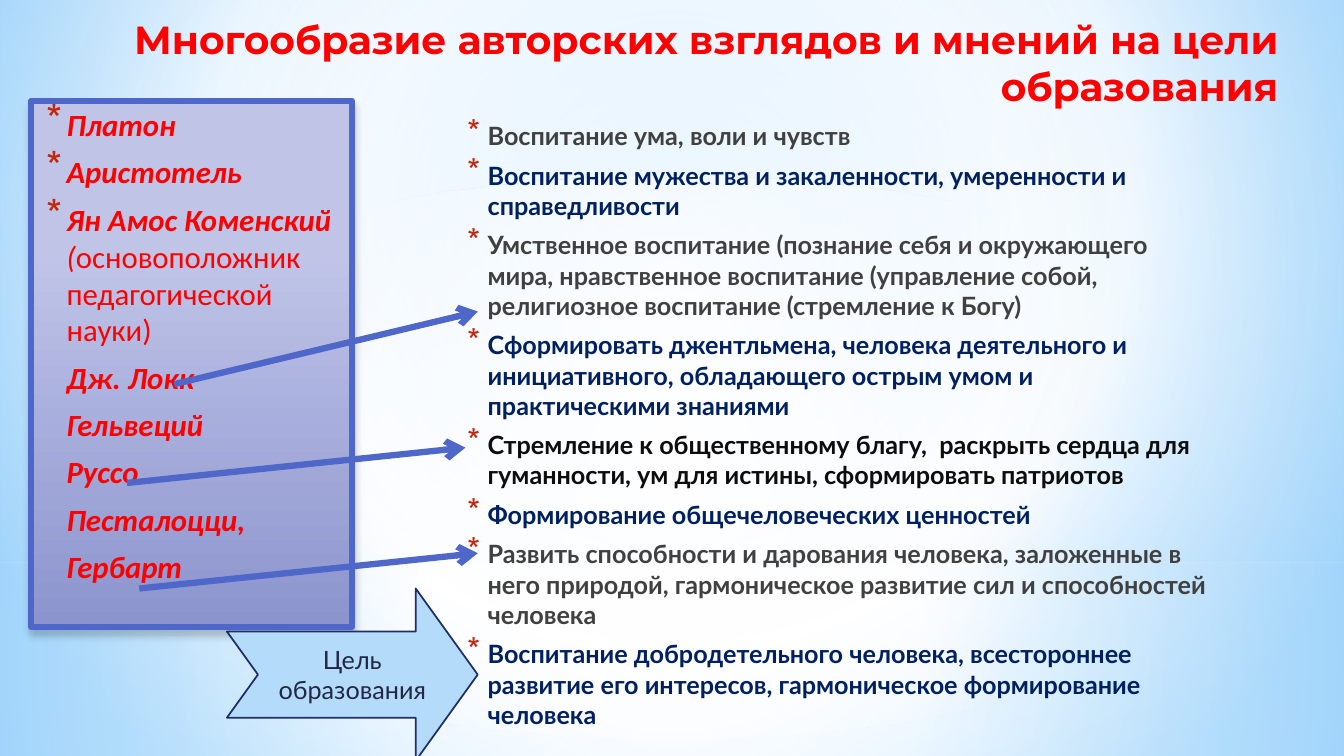
from lxml.etree import SubElement
from pptx import Presentation
from pptx.dml.color import RGBColor
from pptx.enum.shapes import MSO_CONNECTOR, MSO_SHAPE
from pptx.enum.text import MSO_ANCHOR, PP_ALIGN
from pptx.oxml.ns import qn
from pptx.util import Cm, Pt

RED, BLUE, NAVY, GREY = "FF0000", "4E67C8", "002060", "404040"
BLACK, SKY, WHITE, RUST, INK = "0D0D0D", "B4DCFA", "FFFFFF", "C3260C", "212745"

PAGE = (0, 0, 33.87, 19.05)
HEAD = (0.79, 0.25, 31.67, 2.29)
PANEL = (0.79, 2.54, 8.08, 13.26)
LIST = (11.4, 2.91, 19.33, 14.6)
ARROW = (5.72, 14.83, 6.32, 4.34)

CENTER, UPPER = (50, 50, 50, 50), (20, 10, 20, 60)
BASE = [(0, "9ED5FF", 100), (60, WHITE, 100), (100, "5BB9FF", 100)]
LILAC = [(28, "C0C5E8", 100), (100, "8C94CE", 100)]
FLOOR = [(0, WHITE, 91), (37, WHITE, 76), (100, SKY, 79)]
WALL = [(0, WHITE, 89), (48, WHITE, 62), (100, SKY, 79)]
BAND = [(0, WHITE, 0), (29, WHITE, 30), (45, SKY, 40), (55, WHITE, 26),
        (65, SKY, 60), (100, WHITE, 0)]
GLOW = [(0, WHITE, 100), (56, WHITE, 0)]
SPLIT = 0.744
LAYERS = [
    (MSO_SHAPE.RECTANGLE, SPLIT, 1 - SPLIT, FLOOR, CENTER),
    (MSO_SHAPE.RECTANGLE, 0, SPLIT, WALL, CENTER),
    (MSO_SHAPE.RECTANGLE, 0.55, 0.333, BAND, None),
    (MSO_SHAPE.OVAL, 0.233, SPLIT, GLOW, CENTER),
]

TITLE = "Многообразие авторских взглядов и мнений на цели образования"
LABEL = "Цель образования"
STARRED = ["Платон", "Аристотель", "Ян Амос Коменский "]
PLAIN = ["Дж. Локк", "Гельвеций", "Руссо", "Песталоцци,", "Гербарт"]
NOTE = [("(", True), ("основоположник педагогической науки)", False)]
GOALS = [
    ("Воспитание ума, воли и чувств", GREY),
    ("Воспитание мужества и закаленности, умеренности и справедливости", NAVY),
    ("Умственное воспитание (познание себя и окружающего мира, нравственное "
     "воспитание (управление собой, религиозное воспитание (стремление к Богу)", GREY),
    ("Сформировать джентльмена, человека деятельного и инициативного, "
     "обладающего острым умом и практическими знаниями", NAVY),
    ("Стремление к общественному благу,  раскрыть сердца для гуманности, "
     "ум для истины, сформировать патриотов", BLACK),
    ("Формирование общечеловеческих ценностей", NAVY),
    ("Развить способности и дарования человека, заложенные в него природой, "
     "гармоническое развитие сил и способностей человека", GREY),
    ("Воспитание добродетельного человека, всестороннее развитие его интересов, "
     "гармоническое формирование человека", NAVY),
]
LINKS = [((3.6, 7.14), (11.25, 5.31)), ((2.41, 9.63), (10.94, 8.74)),
         ((2.72, 12.29), (11.25, 11.4))]


def color(code):
    """Turn a hex string into a colour."""
    return RGBColor.from_string(code)


def node(parent, tag, **attrs):
    """Add a drawing element with its attributes."""
    return SubElement(parent, qn("a:" + tag), {k: str(v) for k, v in attrs.items()})


def tint(parent, code, alpha):
    """Add a colour of the given opacity in percent."""
    node(node(parent, "srgbClr", val=code), "alpha", val=alpha * 1000)


def blend(owner, fill, stops, focus=None):
    """Fill with a round gradient about the focus, or a downward one."""
    fill.gradient()
    grad = owner._element.find(".//" + qn("a:gradFill"))
    for child in list(grad):
        grad.remove(child)
    group = node(grad, "gsLst")
    for pos, code, alpha in stops:
        tint(node(group, "gs", pos=pos * 1000), code, alpha)
    if focus:
        sides = {side: part * 1000 for side, part in zip("ltrb", focus)}
        node(node(grad, "path", path="circle"), "fillToRect", **sides)
    else:
        node(grad, "lin", ang=5400000, scaled=0)


def shape(slide, kind, box):
    """Add a preset shape without line or shadow."""
    item = slide.shapes.add_shape(kind, *map(Cm, box))
    item.shadow.inherit = False
    item.line.fill.background()
    return item


def stroke(item, code, width):
    """Set the line of a shape or connector."""
    item.line.color.rgb, item.line.width = color(code), Pt(width)


def textbox(slide, box):
    """Add a wrapping text box and return its frame."""
    frame = slide.shapes.add_textbox(*map(Cm, box)).text_frame
    frame.word_wrap = True
    return frame


def write(para, text, font, size, code, bold=False, slant=False):
    """Add one formatted run to a paragraph."""
    run = para.add_run()
    run.text = text
    run.font.name, run.font.size = font, Pt(size)
    run.font.bold, run.font.italic = bold, slant
    run.font.color.rgb = color(code)


def entry(frame, index, size, star):
    """Return the next list paragraph, spaced, with a star if asked."""
    para = frame.add_paragraph() if index else frame.paragraphs[0]
    para.space_before, para.space_after = Pt(size * 0.2), Pt(3)
    props = para._p.get_or_add_pPr()
    props.set("marL", str(Cm(0.64)))
    props.set("indent", str(-Cm(0.51) if star else 0))
    if star:
        node(node(props, "buClr"), "srgbClr", val=RUST)
        node(props, "buSzPct", val=130000)
        node(props, "buChar", char="*")
    return para


def backdrop(slide, box):
    """Paint the background and its layers of light."""
    left, top, width, height = box
    blend(slide, slide.background.fill, BASE, UPPER)
    for kind, start, part, stops, focus in LAYERS:
        layer = shape(slide, kind, (left, top + start * height, width, part * height))
        blend(layer, layer.fill, stops, focus)


def heading(slide, box):
    """Write the title at the right."""
    para = textbox(slide, box).paragraphs[0]
    para.alignment = PP_ALIGN.RIGHT
    write(para, TITLE, "Montserrat", 28, RED, bold=True)


def thinkers(slide, box):
    """Draw the panel of names, the last starred one with a note."""
    panel = shape(slide, MSO_SHAPE.RECTANGLE, box)
    blend(panel, panel.fill, LILAC)
    stroke(panel, BLUE, 4.5)
    effect = panel._element.spPr.find(qn("a:effectLst"))
    tint(node(effect, "outerShdw", blurRad=Pt(5), dist=Pt(4), dir=5400000,
              rotWithShape=0), "000000", 20)
    frame = panel.text_frame
    frame.vertical_anchor = MSO_ANCHOR.TOP
    for index, name in enumerate(STARRED + PLAIN):
        star = index < len(STARRED)
        para = entry(frame, index, 22, star)
        para.alignment = PP_ALIGN.LEFT if star else PP_ALIGN.JUSTIFY
        write(para, name, "Calibri", 22, RED, bold=True, slant=True)
        if name == STARRED[-1]:
            for text, slant in NOTE:
                write(para, text, "Calibri", 22, RED, slant=slant)


def goals(slide, box):
    """Write the list of goals."""
    frame = textbox(slide, box)
    for index, (text, code) in enumerate(GOALS):
        write(entry(frame, index, 18, True), text, "Lato", 18, code, bold=True)


def pointer(slide, box):
    """Draw the notched arrow with its label."""
    arrow = shape(slide, MSO_SHAPE.NOTCHED_RIGHT_ARROW, box)
    arrow.adjustments[0], arrow.adjustments[1] = 0.5, 0.36
    arrow.fill.solid()
    arrow.fill.fore_color.rgb = color(SKY)
    stroke(arrow, "1F2E69", 1.25)
    para = arrow.text_frame.paragraphs[0]
    para.alignment = PP_ALIGN.CENTER
    write(para, LABEL, "Lato", 18, INK)


def links(slide, box):
    """Draw arrows from the names in the box to the goals."""
    left, top = box[:2]
    for (x1, y1), (x2, y2) in LINKS:
        ends = (left + x1, top + y1, left + x2, top + y2)
        link = slide.shapes.add_connector(MSO_CONNECTOR.STRAIGHT, *map(Cm, ends))
        stroke(link, BLUE, 4.5)
        node(link.line._get_or_add_ln(), "tailEnd", type="arrow")
        node(link._element.spPr, "effectLst")


def main():
    """Build and save the slide."""
    deck = Presentation()
    deck.slide_width, deck.slide_height = map(Cm, PAGE[2:])
    slide = deck.slides.add_slide(deck.slide_layouts[6])
    parts = [(backdrop, PAGE), (heading, HEAD), (thinkers, PANEL),
             (goals, LIST), (pointer, ARROW), (links, PANEL)]
    for draw, box in parts:
        draw(slide, box)
    deck.save("out.pptx")


if __name__ == "__main__":
    main()
